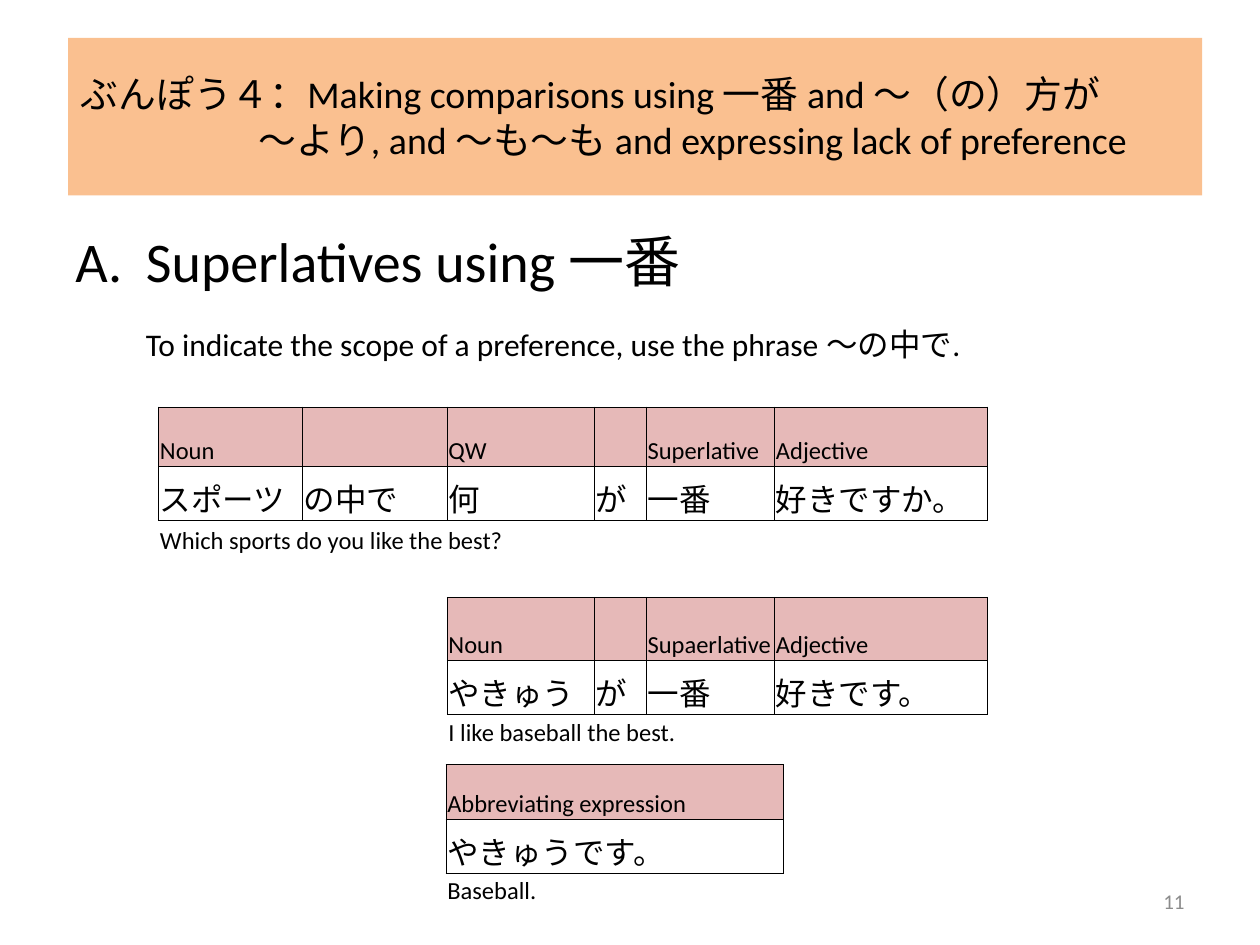
"""Build a grammar slide on Japanese superlatives with example tables."""
from lxml import etree
from pptx import Presentation
from pptx.dml.color import RGBColor
from pptx.enum.text import MSO_ANCHOR, PP_ALIGN
from pptx.oxml.ns import qn
from pptx.util import Inches, Pt

NO_GRID_STYLE = "{2D5ABB26-0587-4C30-8999-92F81FD0307C}"
HEADER_FILL = "E6B9B8"


def paint(target, color):
    if hasattr(target, "solid"):
        target.solid()
        target = target.fore_color
    else:
        target = target.color
    target.rgb = RGBColor.from_string(color)


def write(paragraph, text, size=14, font="Calibri", color="000000"):
    run = paragraph.add_run()
    run.text = text
    run.font.size = Pt(size)
    run.font.name = font
    paint(run.font, color)


prs = Presentation()
prs.slide_width, prs.slide_height = Inches(10), Inches(7.5)
slide = prs.slides.add_slide(prs.slide_layouts[5])

title = slide.shapes.title
title.left, title.top = Inches(0.54), Inches(0.3)
title.width, title.height = Inches(9), Inches(1.25)
paint(title.fill, "FAC090")
title.text_frame.vertical_anchor = MSO_ANCHOR.MIDDLE
heading = title.text_frame.paragraphs[0]
heading.alignment = PP_ALIGN.LEFT
heading_props = heading._p.get_or_add_pPr()
heading_props.set("marL", str(Inches(1.41)))
heading_props.set("indent", str(Inches(-1.41)))
write(heading, "ぶんぽう４：Making comparisons using 一番 and ～（の）方が", size=21.6)
heading.add_line_break()
write(heading, "～より, and ～も～も and expressing lack of preference", size=21.6)

body = slide.shapes.add_textbox(Inches(0.5), Inches(1.75), Inches(9), Inches(1.4)).text_frame
body.word_wrap = True
topic, scope = body.paragraphs[0], body.add_paragraph()
for paragraph in (topic, scope):
    paragraph._p.get_or_add_pPr().set("marL", str(Inches(0.56)))
topic_props = topic._p.get_or_add_pPr()
topic_props.set("indent", str(Inches(-0.56)))
etree.SubElement(topic_props, qn("a:buFont"), typeface="+mj-lt")
etree.SubElement(topic_props, qn("a:buAutoNum"), type="alphaUcPeriod")
write(topic, "Superlatives using ", size=32)
write(topic, "一番", size=32, font="Lato")
scope.space_before = Pt(18)
write(scope, "To indicate the scope of a preference, use the phrase ", size=18)
write(scope, "～の中で", size=18, font="Lato")
write(scope, ".", size=18)

page = slide.shapes.add_textbox(Inches(7.17), Inches(6.95), Inches(2.33), Inches(0.4)).text_frame
page.word_wrap = True
page.vertical_anchor = MSO_ANCHOR.MIDDLE
page.paragraphs[0].alignment = PP_ALIGN.RIGHT
write(page.paragraphs[0], "11", size=12, color="8C8C8C")

question_answer = [
    ("header", 0, ["Noun", "", "QW", "", "Superlative", "Adjective"]),
    ("example", 0, ["スポーツ", "の中で", "何", "が", "一番", "好きですか。"]),
    ("meaning", 0, ["Which sports do you like the best?"]),
    ("gap", 0, []),
    ("header", 2, ["Noun", "", "Supaerlative", "Adjective"]),
    ("example", 2, ["やきゅう", "が", "一番", "好きです。"]),
    ("meaning", 2, ["I like baseball the best."]),
]
abbreviation = [
    ("header", 0, ["Abbreviating expression"]),
    ("example", 0, ["やきゅうです。"]),
    ("meaning", 0, ["Baseball."]),
]
tables = [
    (1.26, 3.23, [1.14, 1.15, 1.17, 0.41, 1.02, 1.69],
     [0.47, 0.43, 0.28, 0.33, 0.5, 0.43, 0.27], question_answer, {2: (0, 3), 6: (2, 4)}),
    (3.54, 6.07, [2.68], [0.43, 0.43, 0.26], abbreviation, {}),
]

for left, top, widths, heights, rows, merges in tables:
    table = slide.shapes.add_table(
        len(heights), len(widths), Inches(left), Inches(top),
        Inches(sum(widths)), Inches(sum(heights))).table
    table._tbl.tblPr.find(qn("a:tableStyleId")).text = NO_GRID_STYLE
    table.first_row = table.horz_banding = False
    for column, width in zip(table.columns, widths):
        column.width = Inches(width)
    for row, height in zip(table.rows, heights):
        row.height = Inches(height)
    for r, (first, last) in merges.items():
        table.cell(r, first).merge(table.cell(r, last))

    for r, (role, start, words) in enumerate(rows):
        for c in range(len(widths)):
            cell = table.cell(r, c)
            cell.margin_left = cell.margin_right = cell.margin_top = Inches(0.01)
            cell.margin_bottom = 0
            cell.vertical_anchor = MSO_ANCHOR.BOTTOM
            paragraph = cell.text_frame.paragraphs[0]
            word = words[c - start] if 0 <= c - start < len(words) else ""
            if word and role == "example":
                write(paragraph, word, size=18, font="Lato")
            elif word:
                write(paragraph, word)
            else:
                etree.SubElement(paragraph._p, qn("a:endParaRPr"), sz="1400")

            in_grid = role in ("header", "example") and c >= start
            if in_grid:
                for side in ("lnL", "lnR", "lnT", "lnB"):
                    line = etree.SubElement(cell._tc.get_or_add_tcPr(), qn(f"a:{side}"), w=str(Pt(0.5)))
                    line_fill = etree.SubElement(line, qn("a:solidFill"))
                    etree.SubElement(line_fill, qn("a:srgbClr"), val="000000")
            if in_grid and role == "header":
                paint(cell.fill, HEADER_FILL)
            else:
                cell.fill.background()

prs.save("out.pptx")
